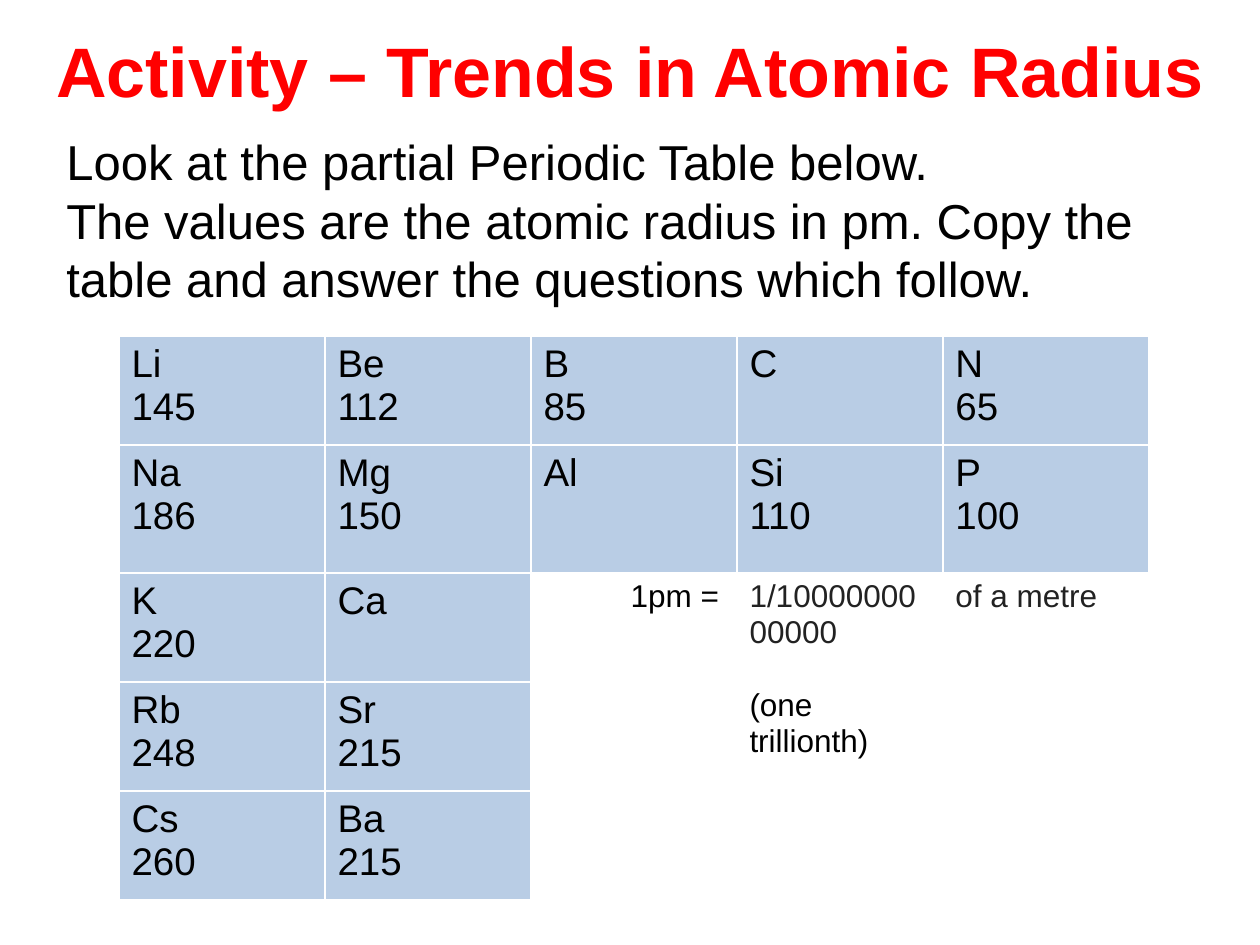
from dataclasses import dataclass

from pptx import Presentation
from pptx.dml.color import RGBColor
from pptx.enum.text import MSO_ANCHOR, MSO_AUTO_SIZE, PP_ALIGN
from pptx.util import Emu, Pt

LEFT, CENTER, RIGHT = PP_ALIGN.LEFT, PP_ALIGN.CENTER, PP_ALIGN.RIGHT
TOP, MIDDLE = MSO_ANCHOR.TOP, MSO_ANCHOR.MIDDLE
NO_AUTOFIT = MSO_AUTO_SIZE.NONE
EMU_PER_PX = 914400 / 126
TITLE_ONLY_LAYOUT = 5


@dataclass(frozen=True)
class Theme:
    font: str = "Arial"
    title_color: str = "FF0000"
    text_color: str = "000000"
    note_color: str = "222222"
    element_fill: str = "B9CDE5"
    title_size: int = 40
    intro_size: int = 28
    element_size: int = 22
    note_size: int = 18


THEME = Theme()

INTRO = [
    "Look at the partial Periodic Table below.",
    "The values are the atomic radius in pm. Copy the table and answer "
    "the questions which follow.",
]
# Symbol and radius in pm; a missing radius is left for the pupil.
ELEMENTS = [
    [("Li", 145), ("Be", 112), ("B", 85), ("C", None), ("N", 65)],
    [("Na", 186), ("Mg", 150), ("Al", None), ("Si", 110), ("P", 100)],
    [("K", 220), ("Ca", None)],
    [("Rb", 248), ("Sr", 215)],
    [("Cs", 260), ("Ba", 215)],
]
# (row, column): text, colour, alignment
NOTES = {
    (2, 2): ("1pm =", THEME.text_color, RIGHT),
    (2, 3): ("1/1000000000000", THEME.note_color, LEFT),
    (2, 4): ("of a metre", THEME.note_color, LEFT),
    (3, 3): ("(one trillionth)", THEME.text_color, LEFT),
}
COLUMN_COUNT = 5
COLUMN_WIDTH = 206
ROW_HEIGHTS = [109, 128, 109, 109, 109]


def px(length):
    return Emu(round(length * EMU_PER_PX))


def write(frame, lines, size, color=THEME.text_color, bold=False, align=LEFT):
    """Fill a text frame with one paragraph per line."""
    for index, line in enumerate(lines):
        para = frame.paragraphs[0] if index == 0 else frame.add_paragraph()
        para.alignment = align
        span = para.add_run()
        span.text = line
        span.font.name = THEME.font
        span.font.size = Pt(size)
        span.font.bold = bold
        span.font.color.rgb = RGBColor.from_string(color)


def add_title(page, text):
    title = page.shapes.title
    title.left, title.top, title.width, title.height = px(15), px(0), px(1230), px(139)
    frame = title.text_frame
    frame.auto_size = NO_AUTOFIT
    frame.vertical_anchor = MIDDLE
    write(frame, [text], THEME.title_size, color=THEME.title_color, bold=True, align=CENTER)


def add_intro(page):
    box = page.shapes.add_textbox(px(54), px(125), px(1160), px(190))
    box.text_frame.word_wrap = True
    write(box.text_frame, INTRO, THEME.intro_size)


def fill_element(cell, symbol, radius):
    cell.fill.solid()
    cell.fill.fore_color.rgb = RGBColor.from_string(THEME.element_fill)
    lines = [symbol] if radius is None else [symbol, str(radius)]
    write(cell.text_frame, lines, THEME.element_size)


def fill_note(cell, text, color, align):
    if align == RIGHT:
        cell.margin_right = px(18)
    write(cell.text_frame, [text], THEME.note_size, color=color, align=align)


def add_periodic_table(page):
    row_count = len(ROW_HEIGHTS)
    table = page.shapes.add_table(
        row_count, COLUMN_COUNT, px(119), px(336),
        px(COLUMN_WIDTH * COLUMN_COUNT), px(sum(ROW_HEIGHTS)),
    ).table
    table.horz_banding = False
    for column in table.columns:
        column.width = px(COLUMN_WIDTH)
    for row, height in zip(table.rows, ROW_HEIGHTS):
        row.height = px(height)
    for row_index, elements in enumerate(ELEMENTS):
        for column_index in range(COLUMN_COUNT):
            cell = table.cell(row_index, column_index)
            cell.vertical_anchor = TOP
            if column_index < len(elements):
                fill_element(cell, *elements[column_index])
                continue
            cell.fill.background()
            if (row_index, column_index) in NOTES:
                fill_note(cell, *NOTES[row_index, column_index])


def main():
    deck = Presentation()
    deck.slide_width, deck.slide_height = px(1260), px(945)
    page = deck.slides.add_slide(deck.slide_layouts[TITLE_ONLY_LAYOUT])
    add_title(page, "Activity – Trends in Atomic Radius")
    add_intro(page)
    add_periodic_table(page)
    deck.save("out.pptx")


if __name__ == "__main__":
    main()
